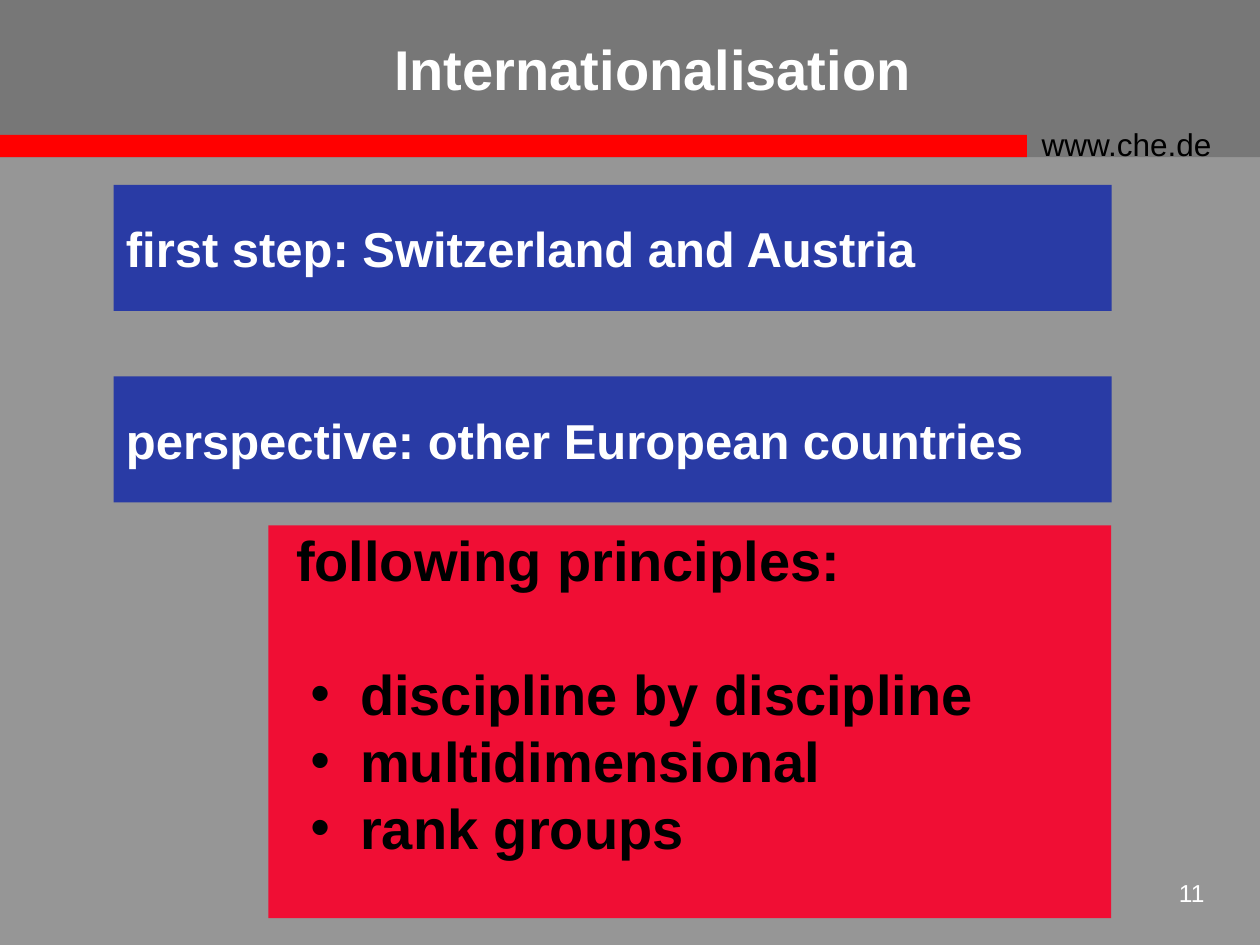
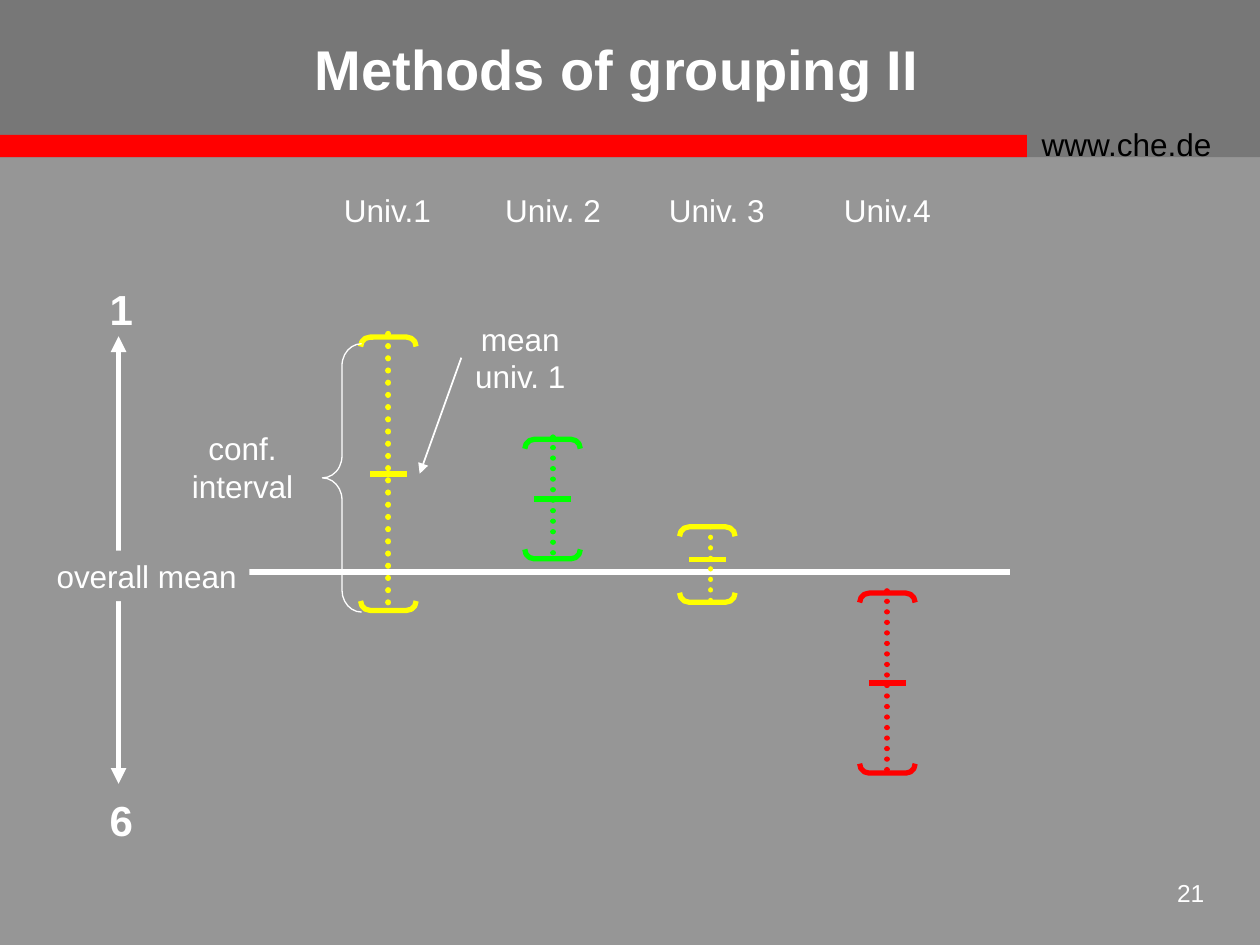
import pptx
import pptx.util
import pptx.dml.color
import pptx.enum.dml
import pptx.enum.shapes
import pptx.enum.text
from lxml import etree
from pptx.util import Cm

SHAPE = pptx.enum.shapes.MSO_SHAPE
ALIGN = pptx.enum.text.PP_ALIGN
ANCHOR = pptx.enum.text.MSO_ANCHOR
DOTS = pptx.enum.dml.MSO_LINE.ROUND_DOT

C = {"bg": "969696", "band": "777777", "stripe": "FF0000", "white": "FFFFFF", "black": "000000",
     "blue": "293BA5", "crimson": "F00E34", "yellow": "FFFF00", "green": "00FF00", "red": "FF0000"}
FONT = "Arial"
SITE = "www.che.de"

# Titles: text, left, width, page number
INTERNATIONAL = ("Internationalisation", 7.7, 16.79, "11")
GROUPING = ("Methods of grouping II", 6.1, 20.73, "21")

STEPS = ["first step: Switzerland and Austria", "perspective: other European countries"]
PRINCIPLES_HEAD = "following principles:"
PRINCIPLES = ["discipline by discipline", "multidimensional", "rank groups"]

# Vertical positions in cm; dots = x, top, bottom of the dotted line
UNIVERSITIES = [
    dict(name="Univ.1", name_x=7.81, x=7.83, mid=9.55, mean=9.55, span=5.51,
         dots=(7.83, 6.73, 12.34), color="yellow", weight=3.5),
    dict(name="Univ. 2", name_x=11.15, x=11.14, mid=10.06, mean=10.06, span=2.41,
         dots=(11.15, 8.81, 11.33), color="green", weight=3),
    dict(name="Univ. 3", name_x=14.45, x=14.26, mid=11.38, mean=11.28, span=1.52,
         dots=(14.33, 10.62, 12.14), color="yellow", weight=3),
    dict(name="Univ.4", name_x=17.89, x=17.89, mid=13.77, mean=13.77, span=3.63,
         dots=(17.88, 11.91, 15.62), color="red", weight=3),
]
BRACKET_WIDTH, TICK_WIDTH = 1.12, 0.75

# Labels: lines, centre x, top, width
NOTES = [(["mean", "univ. 1"], 10.49, 6.32, 2.4), (["conf.", "interval"], 4.89, 8.53, 2.6)]
SCALE_X = 2.39
SCALE_ENDS = [("1", 5.59), ("6", 15.9)]


def rgb(name):
    return pptx.dml.color.RGBColor.from_string(C[name])


def add_box(s, x, y, w, h, fill=None, line=None, weight=1, kind=SHAPE.RECTANGLE):
    sp = s.shapes.add_shape(kind, Cm(x), Cm(y), Cm(w), Cm(h))
    sp.shadow.inherit = False
    if fill:
        sp.fill.solid()
        sp.fill.fore_color.rgb = rgb(fill)
    else:
        sp.fill.background()
    if line:
        sp.line.color.rgb = rgb(line)
        sp.line.width = pptx.util.Pt(weight)
    else:
        sp.line.fill.background()
    return sp


def write(sp, lines, size=18, color="white", bold=False, align=ALIGN.LEFT,
          anchor=ANCHOR.TOP, wrap=True):
    tf = sp.text_frame
    tf.word_wrap = wrap
    tf.vertical_anchor = anchor
    for i, text in enumerate(lines):
        p = tf.paragraphs[0] if i == 0 else tf.add_paragraph()
        p.alignment = align
        r = p.add_run()
        r.text = text
        r.font.name, r.font.size, r.font.bold = FONT, pptx.util.Pt(size), bold
        r.font.color.rgb = rgb(color)
    return tf


def add_text(s, lines, x, y, w, h, **fmt):
    return write(s.shapes.add_textbox(Cm(x), Cm(y), Cm(w), Cm(h)), lines, **fmt)


def add_line(s, x1, y1, x2, y2, color="white", weight=3.0, dotted=False, arrows=()):
    """Draw a straight line; arrows lists headEnd and/or tailEnd."""
    cn = s.shapes.add_connector(pptx.enum.shapes.MSO_CONNECTOR.STRAIGHT,
                                Cm(x1), Cm(y1), Cm(x2), Cm(y2))
    cn.line.color.rgb = rgb(color)
    cn.line.width = pptx.util.Pt(weight)
    sp_pr = cn.element.spPr
    ln = sp_pr.get_or_add_ln()
    if dotted:
        cn.line.dash_style = DOTS
        ln.set("cap", "rnd")
    for end in arrows:
        etree.SubElement(ln, pptx.oxml.ns.qn("a:" + end), type="triangle")
    etree.SubElement(sp_pr, pptx.oxml.ns.qn("a:effectLst"))


def indent(p, left, first=0.0, bullet=None):
    p_pr = p._p.get_or_add_pPr()
    p_pr.set("marL", str(Cm(left)))
    p_pr.set("indent", str(Cm(first)))
    if bullet:
        etree.SubElement(p_pr, pptx.oxml.ns.qn("a:buFont"), typeface=FONT)
        etree.SubElement(p_pr, pptx.oxml.ns.qn("a:buChar"), char=bullet)


def new_slide(prs, title, left, width, page):
    """Add a slide with the shared bands, web address, page number and title."""
    s = prs.slides.add_slide(prs.slide_layouts[6])
    s.background.fill.solid()
    s.background.fill.fore_color.rgb = rgb("bg")
    add_box(s, 0, 0, 25.4, 3.17, "band")
    add_box(s, 0, 2.72, 20.7, 0.45, "stripe")
    add_text(s, [SITE], 20.75, 2.39, 4.45, 1.02, color="black")
    add_text(s, [page], 23.06, 17.58, 1.47, 1.07, size=14, align=ALIGN.RIGHT)
    add_text(s, [title], left, 0, width, 2.74, size=32, bold=True, anchor=ANCHOR.MIDDLE)
    return s


def international_slide(prs):
    s = new_slide(prs, *INTERNATIONAL)
    for i, step in enumerate(STEPS):
        sp = add_box(s, 2.29, 3.73 + i * 3.86, 20.12, 2.54, "blue")
        write(sp, [step], size=28, bold=True, anchor=ANCHOR.MIDDLE)
    sp = add_box(s, 5.41, 10.59, 16.99, 7.92, "crimson")
    tf = write(sp, [PRINCIPLES_HEAD] + PRINCIPLES, size=32, color="black", bold=True)
    tf.margin_top = 0
    head, *points = tf.paragraphs
    indent(head, 0.31)
    points[0].space_before = pptx.util.Pt(38)
    for p in points:
        indent(p, 1.6, -1.0, "•")


def add_interval(s, u):
    """Draw one university's name, bracketed interval and mean tick."""
    color, x = u["color"], u["x"]
    add_text(s, [u["name"]], u["name_x"] - 1.25, 3.73, 2.5, 1.02, align=ALIGN.CENTER, wrap=False)
    sp = add_box(s, x - u["span"] / 2, u["mid"] - BRACKET_WIDTH / 2, u["span"], BRACKET_WIDTH,
                 line=color, weight=3, kind=SHAPE.DOUBLE_BRACKET)
    sp.rotation = 270
    sp.adjustments[0] = 0.17
    dots_x, top, bottom = u["dots"]
    add_line(s, dots_x, top, dots_x, bottom, color, u["weight"], dotted=True)
    add_line(s, x - TICK_WIDTH / 2, u["mean"], x + TICK_WIDTH / 2, u["mean"], color, u["weight"])


def grouping_slide(prs):
    s = new_slide(prs, *GROUPING)
    add_line(s, 3.33, 11.53, 20.37, 11.53)
    add_line(s, SCALE_X, 6.78, SCALE_X, 15.8, arrows=("headEnd", "tailEnd"))
    for text, y in SCALE_ENDS:
        add_text(s, [text], 1.96, y, 0.99, 1.27, size=24, bold=True, wrap=False)
    sp = add_box(s, 0.89, 11.1, 4.14, 1.02, "bg")
    write(sp, ["overall mean"], wrap=False)
    for u in UNIVERSITIES:
        add_interval(s, u)
    brace = add_box(s, 6.5, 6.93, 0.79, 5.41, line="white", weight=0.75, kind=SHAPE.LEFT_BRACE)
    brace.adjustments[0] = 0.56
    for lines, x, y, w in NOTES:
        add_text(s, lines, x - w / 2, y, w, 1.78, align=ALIGN.CENTER, wrap=False)
    add_line(s, 9.3, 7.21, 8.46, 9.55, weight=1, arrows=("tailEnd",))


def main():
    prs = pptx.Presentation()
    prs.slide_width, prs.slide_height = Cm(25.4), Cm(19.05)
    international_slide(prs)
    grouping_slide(prs)
    prs.save("out.pptx")


if __name__ == "__main__":
    main()
